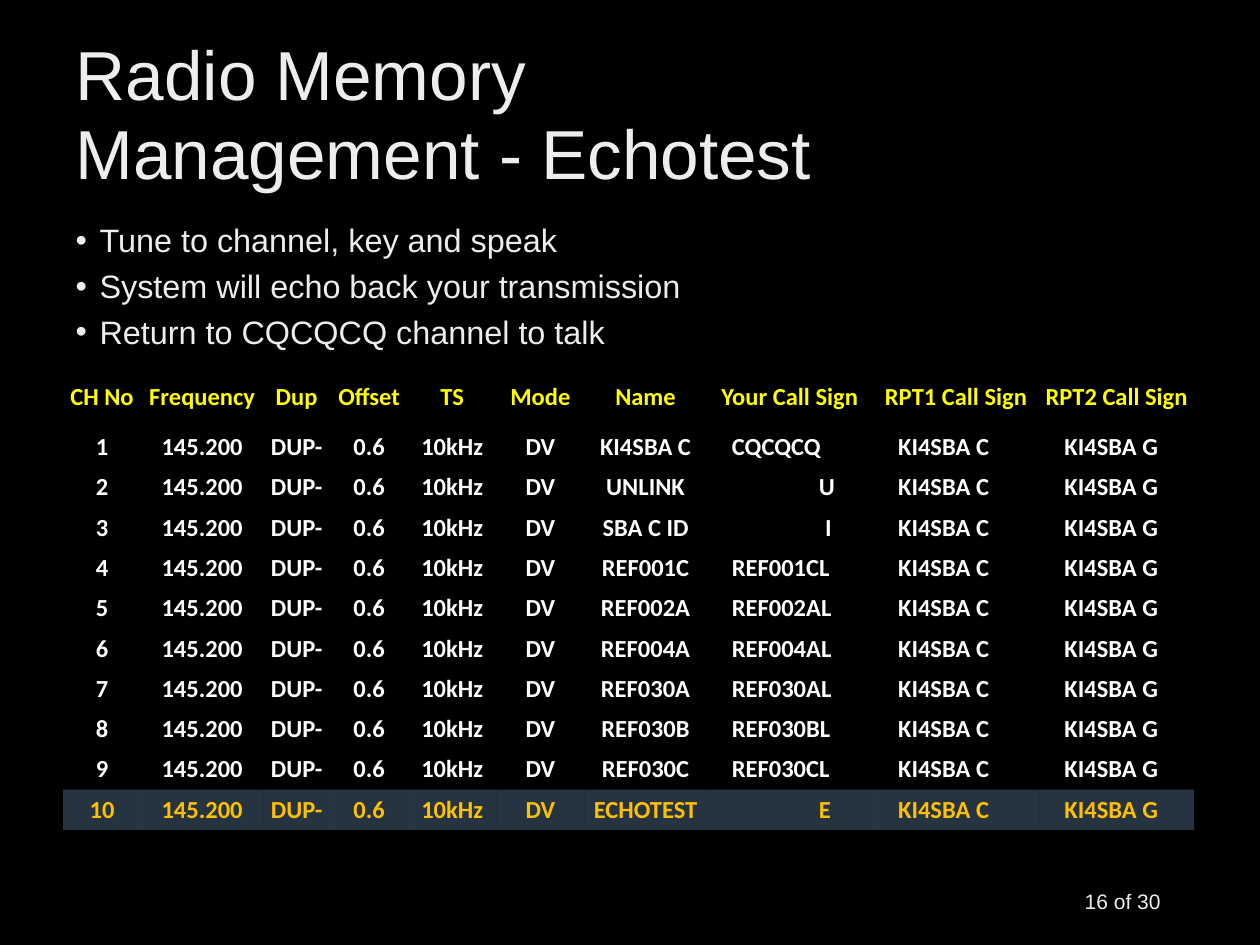
import pptx
import pptx.dml.color
import pptx.enum.text
import pptx.oxml.ns
import pptx.util
from lxml import etree

Inches = pptx.util.Inches
Pt = pptx.util.Pt
ALIGN = pptx.enum.text.PP_ALIGN
MIDDLE = pptx.enum.text.MSO_ANCHOR.MIDDLE

LIGHT = "EDEDED"
NO_TABLE_STYLE = "{2D5ABB26-0587-4C30-8999-92F81FD0307C}"
COLUMN_WIDTHS = [0.62, 0.97, 0.53, 0.62, 0.7, 0.7, 0.97, 1.32, 1.32, 1.23]
HEADINGS = ["CH No", "Frequency", "Dup", "Offset", "TS", "Mode", "Name",
            "Your Call Sign", "RPT1 Call Sign", "RPT2 Call Sign"]
CHANNELS = [("KI4SBA C", "CQCQCQ"), ("UNLINK", "U"), ("SBA C ID", "I"),
            ("REF001C", "REF001CL"), ("REF002A", "REF002AL"),
            ("REF004A", "REF004AL"), ("REF030A", "REF030AL"),
            ("REF030B", "REF030BL"), ("REF030C", "REF030CL"),
            ("ECHOTEST", "E")]
FIRST_CALL_SIGN_COLUMN = 7
CALL_SIGN_INSET = 0.2
COMMAND_INSETS = {"U": 0.89, "I": 0.94, "E": 0.89}


def colour(value):
    """Return the colour for a hex string."""
    return pptx.dml.color.RGBColor.from_string(value)


def add_run(paragraph, text, size, font_name, hex_colour, bold=False):
    """Add one formatted run to a paragraph."""
    run = paragraph.add_run()
    run.text = text
    run.font.size = Pt(size)
    run.font.name = font_name
    run.font.bold = bold
    run.font.color.rgb = colour(hex_colour)


def place(shape, left, top, width, height):
    """Move a shape to a box and make its text wrap at a fixed size."""
    shape.left, shape.top = Inches(left), Inches(top)
    shape.width, shape.height = Inches(width), Inches(height)
    shape.text_frame.word_wrap = True
    shape.text_frame.auto_size = pptx.enum.text.MSO_AUTO_SIZE.NONE


def fill_title(shape, text, box):
    """Place the title and write its text."""
    place(shape, *box)
    shape.text_frame.vertical_anchor = MIDDLE
    paragraph = shape.text_frame.paragraphs[0]
    paragraph.alignment = ALIGN.LEFT
    paragraph.line_spacing = 0.95
    add_run(paragraph, text, 39.6, "Arial", LIGHT)


def fill_bullets(shape, lines, box):
    """Place the body and write one bullet for each line."""
    place(shape, *box)
    frame = shape.text_frame
    for index, line in enumerate(lines):
        paragraph = frame.add_paragraph() if index else frame.paragraphs[0]
        paragraph.line_spacing = 0.84
        paragraph.space_before = Pt(7.5 if index else 0)
        properties = paragraph._p.get_or_add_pPr()
        properties.set("marL", str(Inches(0.19)))
        properties.set("indent", str(-Inches(0.19)))
        bullet = etree.SubElement(properties, pptx.oxml.ns.qn("a:buChar"))
        bullet.set("char", "•")
        add_run(paragraph, line, 18.5, "Arial", LIGHT)


def fill_cell(cell, text, hex_colour, inset=None):
    """Write a cell, centred or with the given left inset."""
    cell.margin_left = Inches(inset or 0)
    cell.margin_right = cell.margin_top = cell.margin_bottom = 0
    cell.vertical_anchor = MIDDLE
    cell.fill.background()
    paragraph = cell.text_frame.paragraphs[0]
    paragraph.alignment = ALIGN.CENTER if inset is None else ALIGN.LEFT
    add_run(paragraph, text, 14, "Calibri", hex_colour, bold=True)


def highlight(cell):
    """Give a cell a translucent blue fill."""
    cell.fill.solid()
    cell.fill.fore_color.rgb = colour("99CCFF")
    tint = cell._tc.tcPr.find(".//" + pptx.oxml.ns.qn("a:srgbClr"))
    etree.SubElement(tint, pptx.oxml.ns.qn("a:alpha")).set("val", "25000")


def add_channel_table(slide, box):
    """Add the memory channel table with its last channel highlighted."""
    frame = slide.shapes.add_table(len(CHANNELS) + 1, len(HEADINGS),
                                   *map(Inches, box))
    table = frame.table
    table.first_row = table.horz_banding = False
    style = table._tbl.tblPr.find(pptx.oxml.ns.qn("a:tableStyleId"))
    style.text = NO_TABLE_STYLE
    for column, width in zip(table.columns, COLUMN_WIDTHS):
        column.width = Inches(width)
    for index, row in enumerate(table.rows):
        row.height = Inches(0.32 if index else 0.47)
    for column, heading in enumerate(HEADINGS):
        fill_cell(table.cell(0, column), heading, "FFFF00")
    for number, (name, call_sign) in enumerate(CHANNELS, start=1):
        selected = number == len(CHANNELS)
        values = [str(number), "145.200", "DUP-", "0.6", "10kHz", "DV",
                  name, call_sign, "KI4SBA C", "KI4SBA G"]
        for column, value in enumerate(values):
            inset = None
            if column >= FIRST_CALL_SIGN_COLUMN:
                inset = COMMAND_INSETS.get(value, CALL_SIGN_INSET)
            cell = table.cell(number, column)
            fill_cell(cell, value, "FFC000" if selected else "FFFFFF", inset)
            if selected:
                highlight(cell)


def add_page_number(slide, text, box):
    """Add the page count at the lower right."""
    shape = slide.shapes.add_textbox(*map(Inches, box))
    place(shape, *box)
    shape.text_frame.vertical_anchor = MIDDLE
    paragraph = shape.text_frame.paragraphs[0]
    paragraph.alignment = ALIGN.RIGHT
    add_run(paragraph, text, 12, "Arial", LIGHT)


def main():
    """Build the slide and save it."""
    presentation = pptx.Presentation()
    presentation.slide_width = Inches(10)
    presentation.slide_height = Inches(7.5)
    slide = presentation.slides.add_slide(presentation.slide_layouts[1])
    slide.background.fill.solid()
    slide.background.fill.fore_color.rgb = colour("000000")
    fill_title(slide.shapes.title, "Radio Memory Management - Echotest",
               (0.5, 0.3, 6.67, 1.25))
    fill_bullets(slide.placeholders[1],
                 ["Tune to channel, key and speak",
                  "System will echo back your transmission",
                  "Return to CQCQCQ channel to talk"],
                 (0.5, 1.75, 9, 1.08))
    add_channel_table(slide, (0.5, 2.92, 8.97, 3.67))
    add_page_number(slide, "16 of 30", (7.06, 6.95, 2.25, 0.4))
    presentation.save("out.pptx")


if __name__ == "__main__":
    main()
